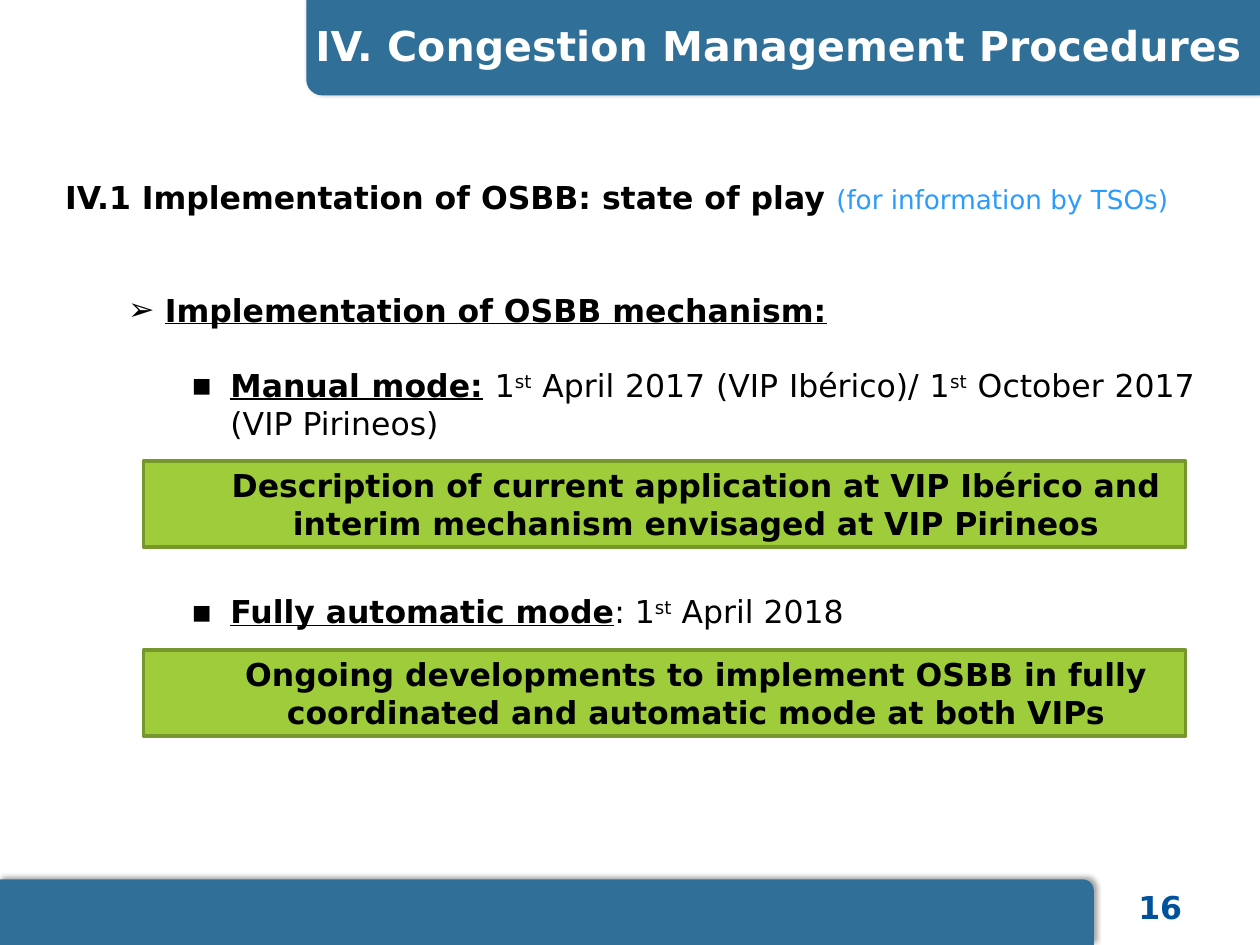
from lxml import etree
from pptx import Presentation
from pptx.dml.color import RGBColor
from pptx.enum.shapes import MSO_SHAPE
from pptx.enum.text import MSO_ANCHOR, MSO_AUTO_SIZE, PP_ALIGN
from pptx.oxml import parse_xml
from pptx.oxml.ns import qn
from pptx.util import Pt

RECT, ROUND1 = MSO_SHAPE.RECTANGLE, MSO_SHAPE.ROUND_1_RECTANGLE
TOP, MIDDLE = MSO_ANCHOR.TOP, MSO_ANCHOR.MIDDLE
LEFT, CENTER, JUSTIFY = PP_ALIGN.LEFT, PP_ALIGN.CENTER, PP_ALIGN.JUSTIFY
NO_FIT = MSO_AUTO_SIZE.NONE
FONT = "DejaVu Sans"
LINE = 21.5  # height of one 18 pt text line
SHADOW = (
    '<a:effectLst xmlns:a="http://schemas.openxmlformats.org/drawingml/2006/main">'
    '<a:outerShdw blurRad="39370" dist="22860" dir="18360000" rotWithShape="0">'
    '<a:srgbClr val="000000"><a:alpha val="35000"/></a:srgbClr>'
    '</a:outerShdw></a:effectLst>')


def rgb(value):
    return RGBColor.from_string(value)


def add_run(p, text, size=18, color="000000", bold=False, underline=False, raised=False):
    r = p.add_run()
    r.text = text
    r.font.name = FONT
    r.font.size = Pt(size)
    r.font.color.rgb = rgb(color)
    r.font.bold = bold
    r.font.underline = underline
    if raised:
        r.font._element.set("baseline", "30000")


prs = Presentation()
prs.slide_width, prs.slide_height = Pt(720), Pt(540)
slide = prs.slides.add_slide(prs.slide_layouts[1])
title, body = slide.placeholders

# Header and footer bars
for x, y, w, h, angle in [(0, 502.5, 625, 37.5, 0), (175, 0, 545, 54.5, 180)]:
    sp = slide.shapes.add_shape(ROUND1, Pt(x), Pt(y), Pt(w), Pt(h))
    sp.rotation = angle
    sp.fill.solid()
    sp.fill.fore_color.rgb = rgb("307098")
    sp.line.fill.background()
    sp._element.spPr.append(parse_xml(SHADOW))

# Page number
sp = slide.shapes.add_textbox(Pt(628.5), Pt(504), Pt(69), Pt(29))
sp.text_frame.word_wrap = True
p = sp.text_frame.paragraphs[0]
p.alignment = CENTER
add_run(p, "16", color="00529B", bold=True)

# Title, in front of the header bar
title.left, title.top, title.width, title.height = Pt(173), Pt(0.5), Pt(547), Pt(54.5)
title.element.getparent().append(title.element)
tf = title.text_frame
tf.auto_size, tf.vertical_anchor = NO_FIT, MIDDLE
p = tf.paragraphs[0]
p.alignment, p.line_spacing = LEFT, 0.9
add_run(p, "IV. Congestion Management Procedures", 23.5, "FFFFFF", bold=True)

# Body: level, left margin, hanging indent, bullet, lines of space before, runs
KEY = dict(bold=True, underline=True)
SUP = dict(raised=True)
items = [
    (0, 0, 0, None, 0, [
        ("IV.1 Implementation of OSBB: state of play ", dict(bold=True)),
        ("(for information by TSOs)", dict(size=15, color="2A9BFF"))]),
    (1, 57, 21, "➢", 2, [("Implementation of OSBB mechanism:", KEY)]),
    (2, 94.5, 22.5, "▪", 1, [
        ("Manual mode:", KEY), (" ", dict(bold=True)), ("1", {}), ("st", SUP),
        (" April 2017 (VIP Ibérico)/ 1", {}), ("st", SUP),
        (" October 2017 (VIP Pirineos)", {})]),
    (2, 94.5, 22.5, "▪", 4, [
        ("Fully automatic mode", KEY), (": 1", {}), ("st", SUP), (" April 2018", {})]),
]
body.left, body.top, body.width, body.height = Pt(30), Pt(98), Pt(660), Pt(353.5)
tf = body.text_frame
tf.auto_size, tf.vertical_anchor = NO_FIT, TOP
for i, (level, margin, hang, bullet, gap, runs) in enumerate(items):
    p = tf.paragraphs[0] if i == 0 else tf.add_paragraph()
    p.level, p.alignment = level, JUSTIFY
    pPr = p._p.get_or_add_pPr()
    pPr.set("marL", str(Pt(margin)))
    pPr.set("indent", str(-Pt(hang)))
    if bullet:
        etree.SubElement(pPr, qn("a:buFont"), typeface=FONT)
        etree.SubElement(pPr, qn("a:buChar"), char=bullet)
    else:
        etree.SubElement(pPr, qn("a:buNone"))
    p.space_before = Pt(gap * LINE)
    for text, style in runs:
        add_run(p, text, **style)

# Green boxes
notes = [
    (263.5, "Description of current application at VIP Ibérico and "
            "interim mechanism envisaged at VIP Pirineos"),
    (371.5, "Ongoing developments to implement OSBB in fully "
            "coordinated and automatic mode at both VIPs"),
]
for y, text in notes:
    sp = slide.shapes.add_shape(RECT, Pt(82), Pt(y), Pt(595.5), Pt(49))
    sp.shadow.inherit = False
    sp.fill.solid()
    sp.fill.fore_color.rgb = rgb("9ECC3B")
    sp.line.color.rgb = rgb("75972C")
    sp.line.width = Pt(2)
    tf = sp.text_frame
    tf.word_wrap, tf.vertical_anchor = True, MIDDLE
    p = tf.paragraphs[0]
    p.level, p.alignment = 1, CENTER
    p._p.get_or_add_pPr().set("marL", str(Pt(36)))
    add_run(p, text, bold=True)

prs.save("out.pptx")
